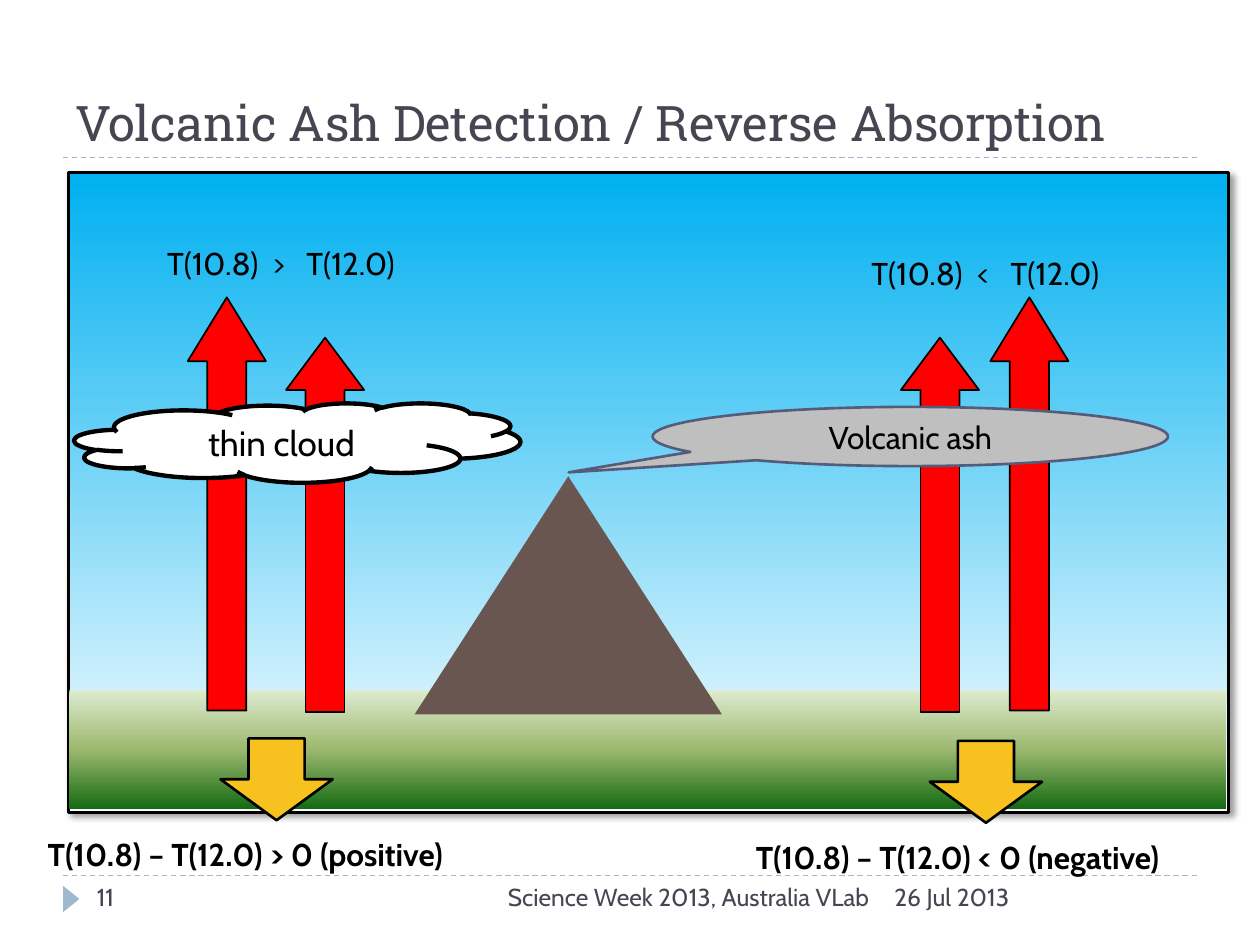
from lxml.etree import SubElement
from pptx import Presentation
from pptx.dml.color import RGBColor
from pptx.enum.dml import MSO_LINE
from pptx.enum.shapes import MSO_CONNECTOR, MSO_SHAPE
from pptx.enum.text import MSO_ANCHOR, PP_ALIGN
from pptx.oxml.ns import qn
from pptx.util import Inches, Pt

THEME = {
    "heading": "Roboto Slab", "body": "Cabin",
    "title_size": 28, "cloud_size": 20, "label_size": 18, "footer_size": 14,
    "muted": "464653", "black": "000000", "rule": "9FB8CD", "white": "FFFFFF",
    "heat": "FF0000", "rock": "6A5650", "ash": "BFBFBF", "ash_edge": "545C79",
    "result": "F7C120",
    "sky": [(0, "00B0F0"), (100, "FFFFFF")],
    "grass": [(0, "DDEBCF"), (50, "9CB86E"), (100, "156B13")],
}
TITLE = "Volcanic Ash Detection / Reverse Absorption"
FOOTERS = [
    ("11", (0.67, 6.95, 2.17, 0.4), PP_ALIGN.LEFT),
    ("26 Jul 2013", (7, 6.95, 2.5, 0.4), PP_ALIGN.LEFT),
    ("Science Week 2013, Australia VLab", (3.17, 6.95, 3.83, 0.4), PP_ALIGN.RIGHT),
]
RULES = [6.95, 1.25]
CLOUD_SIDE = {
    "tall": 1.49, "short": 2.27, "sign": ">", "label": (1.01, 1.89, 2.44, 0.71),
    "arrow": (1.75, 5.86), "result": "T(10.8) – T(12.0) > 0 (positive)",
    "result_box": (0.28, 6.58, 3.74, 0.4),
}
ASH_SIDE = {
    "tall": 7.86, "short": 7.15, "sign": "<", "label": (6.6, 1.97, 2.44, 0.71),
    "arrow": (7.38, 5.88), "result": "T(10.8) – T(12.0) < 0 (negative)",
    "result_box": (5.9, 6.6, 3.82, 0.4),
}
ARROW_WIDTH = 0.62

deck = Presentation()
deck.slide_width, deck.slide_height = Inches(10), Inches(7.5)
slide = deck.slides.add_slide(deck.slide_layouts[6])


def color(name):
    return RGBColor.from_string(THEME[name])


def write(box, words, size, ink="black", font="body", align=PP_ALIGN.CENTER,
          anchor=MSO_ANCHOR.TOP, bold=False, wrap=True):
    frame = box.text_frame
    frame.word_wrap = wrap
    frame.vertical_anchor = anchor
    para = frame.paragraphs[0]
    para.alignment = align
    for word in words:
        span = para.add_run()
        span.text = word
        values = {"name": THEME[font], "size": Pt(THEME[size]), "bold": bold}
        for key, value in values.items():
            setattr(span.font, key, value)
        span.font.color.rgb = color(ink)
    return para


def add_text(place, words, size, **options):
    box = slide.shapes.add_textbox(*map(Inches, place))
    return write(box, words, size, **options)


def add_shape(kind, place, fill, line=None, width=1, adjust=()):
    shape = slide.shapes.add_shape(kind, *map(Inches, place))
    shape.shadow.inherit = False
    for index, value in enumerate(adjust):
        shape.adjustments[index] = value
    if isinstance(THEME[fill], list):
        fill_gradient(shape, THEME[fill])
    else:
        shape.fill.solid()
        shape.fill.fore_color.rgb = color(fill)
    if line:
        shape.line.color.rgb = color(line)
        shape.line.width = Pt(width)
    else:
        shape.line.fill.background()
    return shape


def fill_gradient(shape, stops):
    shape.fill.gradient()
    shape.fill.gradient_angle = 270
    holder = shape.fill._xPr.find(qn("a:gradFill")).find(qn("a:gsLst"))
    for old in list(holder):
        holder.remove(old)
    for position, tone in stops:
        stop = SubElement(holder, qn("a:gs"), pos=str(position * 1000))
        SubElement(stop, qn("a:srgbClr"), val=tone)


def add_shadow(shape):
    effects = shape._element.spPr.find(qn("a:effectLst"))
    shadow = SubElement(effects, qn("a:outerShdw"), blurRad=str(Pt(4)),
                        dist=str(Pt(3)), dir="2700000", algn="tl", rotWithShape="0")
    tone = SubElement(shadow, qn("a:srgbClr"), val=THEME["black"])
    SubElement(tone, qn("a:alpha"), val="40000")


def add_rule(top):
    rule = slide.shapes.add_connector(
        MSO_CONNECTOR.STRAIGHT, Inches(0.5), Inches(top), Inches(9.5), Inches(top))
    rule.line.color.rgb = color("rule")
    rule.line.width = Pt(0.75)
    rule.line.dash_style = MSO_LINE.DASH
    SubElement(rule._element.spPr, qn("a:effectLst"))


def add_radiation(side):
    heat = {"fill": "heat", "line": "black"}
    add_shape(MSO_SHAPE.UP_ARROW, (side["tall"], 2.36, ARROW_WIDTH, 3.28),
              adjust=(0.5, 0.817), **heat)
    add_shape(MSO_SHAPE.UP_ARROW, (side["short"], 2.68, ARROW_WIDTH, 0.61),
              adjust=(0.5, 0.681), **heat)
    add_shape(MSO_SHAPE.RECTANGLE,
              (side["short"] + ARROW_WIDTH / 4, 3.7, ARROW_WIDTH / 2, 1.95), **heat)
    words = ["T(10.8)", f" {side['sign']} ", "T(12.0)"]
    para = add_text(side["label"], words, "label_size")
    para.runs[1].font._element.set("spc", "400")


def add_result(side):
    add_shape(MSO_SHAPE.DOWN_ARROW, (*side["arrow"], 0.89, 0.65),
              "result", "black", 1.5)
    add_text(side["result_box"], [side["result"]], "label_size",
             align=PP_ALIGN.LEFT, bold=True, wrap=False)


for top in RULES:
    add_rule(top)
marker = add_shape(MSO_SHAPE.ISOSCELES_TRIANGLE, (0.46, 7.07, 0.21, 0.13), "rule")
marker.rotation = 90
add_text((0.5, 0.25, 9, 1), [TITLE], "title_size", ink="muted", font="heading",
         align=PP_ALIGN.LEFT, anchor=MSO_ANCHOR.BOTTOM)

sky = add_shape(MSO_SHAPE.RECTANGLE, (0.54, 1.37, 9.21, 5.08), "sky", "black", 1.75)
add_shadow(sky)
add_shape(MSO_SHAPE.RECTANGLE, (0.55, 5.48, 9.18, 0.94), "grass")

add_radiation(ASH_SIDE)
add_shape(MSO_SHAPE.ISOSCELES_TRIANGLE, (3.29, 3.78, 2.44, 1.89), "rock")
ash = add_shape(MSO_SHAPE.OVAL_CALLOUT, (5.18, 3.23, 4.09, 0.47), "ash", "ash_edge",
                1.5, (-0.663, 0.605))
write(ash, ["Volcanic ash"], "label_size", anchor=MSO_ANCHOR.MIDDLE)

add_radiation(CLOUD_SIDE)
cloud = add_shape(MSO_SHAPE.CLOUD, (0.59, 3.2, 3.54, 0.63), "white", "black", 2.5)
write(cloud, ["thin cloud"], "cloud_size")

for side in (CLOUD_SIDE, ASH_SIDE):
    add_result(side)
for words, place, align in FOOTERS:
    add_text(place, [words], "footer_size", ink="muted", align=align)

deck.save("out.pptx")
